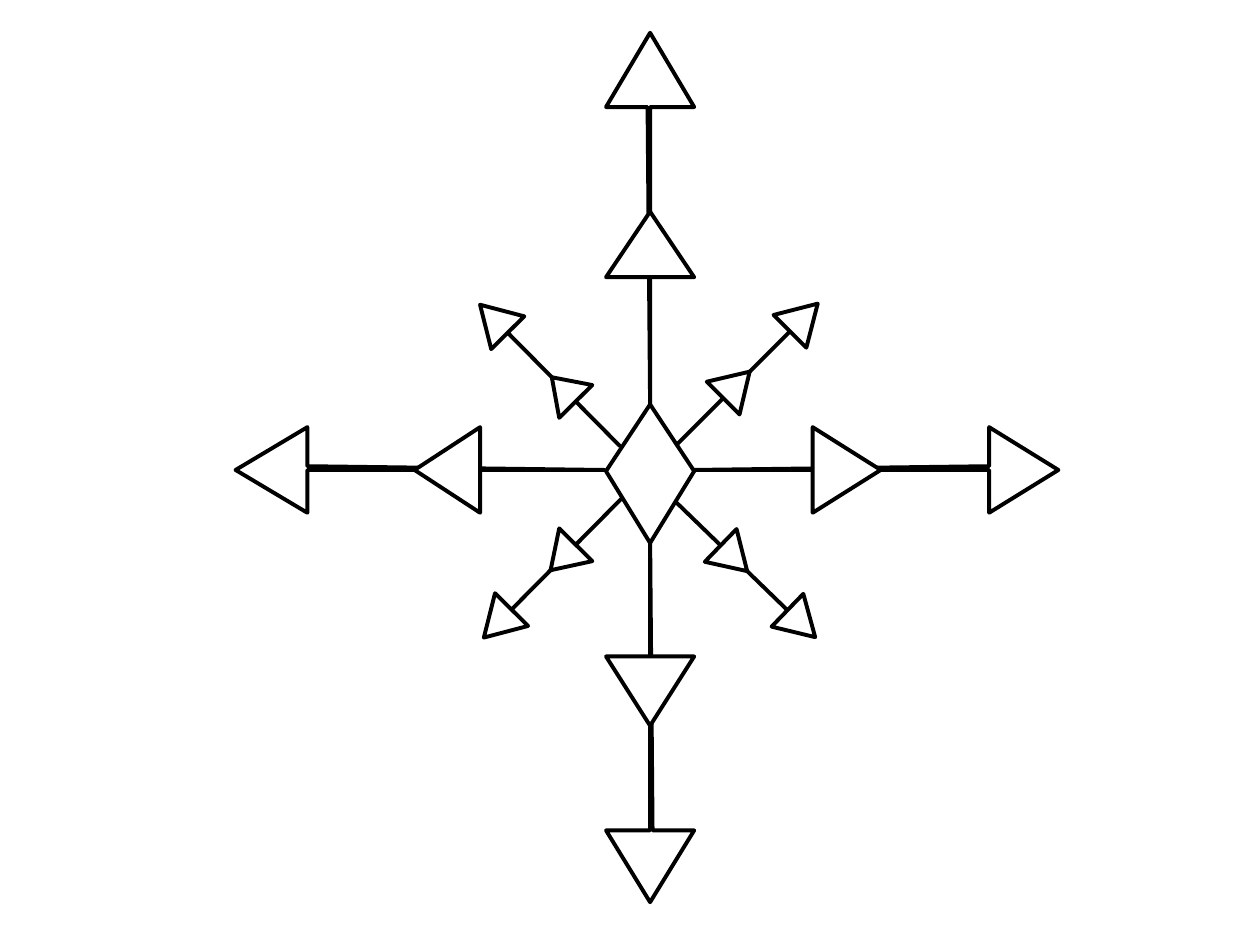
"""Build a slide with an eight-armed compass of double arrows around a diamond."""
from dataclasses import dataclass

from pptx import Presentation
from pptx.dml.color import RGBColor
from pptx.util import Inches, Pt


@dataclass(frozen=True)
class Theme:
    fill: RGBColor = RGBColor(0xFF, 0xFF, 0xFF)
    line: RGBColor = RGBColor(0, 0, 0)
    weight: float = 2.25


class Compass:
    def __init__(self, s, theme):
        self.theme = theme
        self.shapes = s.shapes.add_group_shape().shapes

    def polygon(self, points):
        start, *rest = [(Inches(x), Inches(y)) for x, y in points]
        builder = self.shapes.build_freeform(*start, scale=1.0)
        builder.add_line_segments(rest, close=True)
        sp = builder.convert_to_shape()
        sp.shadow.inherit = False
        sp.fill.solid()
        sp.fill.fore_color.rgb = self.theme.fill
        sp.line.color.rgb = self.theme.line
        sp.line.width = Pt(self.theme.weight)

    def arm(self, root, direction, outer, inner, half, notch=0):
        (x, y), (dx, dy) = root, direction

        def place(along, across):
            return x + along * dx - across * dy, y + along * dy + across * dx

        base, tip = outer
        self.polygon([place(*point) for point in (
            (0, 0), (base, 0), (base, half), (tip, 0), (base, -half), (base, -notch))])
        base, tip = inner
        self.polygon([place(*point) for point in (
            (tip, 0), (base, -half), (base, half))])


ARMS = [
    ((5.16, 3.21), (0, -1), (2.36, 2.95), (1.01, 1.53), 0.35, 0.02),
    ((5.49, 3.73), (1, 0), (2.36, 2.91), (0.96, 1.5), 0.34, 0.03),
    ((5.38, 3.52), (1, -1), (0.89, 1.11), (0.36, 0.57), 0.13),
    ((5.36, 3.98), (1, 0.97), (0.89, 1.11), (0.36, 0.57), 0.13),
    ((4.92, 3.54), (-1, -1.01), (0.89, 1.11), (0.35, 0.54), 0.13),
    ((4.93, 3.96), (-1, 1.01), (0.87, 1.09), (0.36, 0.56), 0.13),
    ((4.8, 3.73), (-1, 0), (2.36, 2.93), (0.99, 1.51), -0.34, -0.03),
    ((5.16, 4.24), (0, 1), (2.35, 2.92), (0.97, 1.52), 0.35, 0.02),
]
DIAMOND = [(5.16, 3.21), (5.51, 3.74), (5.16, 4.31), (4.81, 3.74)]


def main():
    prs = Presentation()
    prs.slide_width, prs.slide_height = Inches(10), Inches(7.5)
    compass = Compass(prs.slides.add_slide(prs.slide_layouts[6]), Theme())
    for arm in ARMS:
        compass.arm(*arm)
    compass.polygon(DIAMOND)
    prs.save("out.pptx")


if __name__ == "__main__":
    main()
